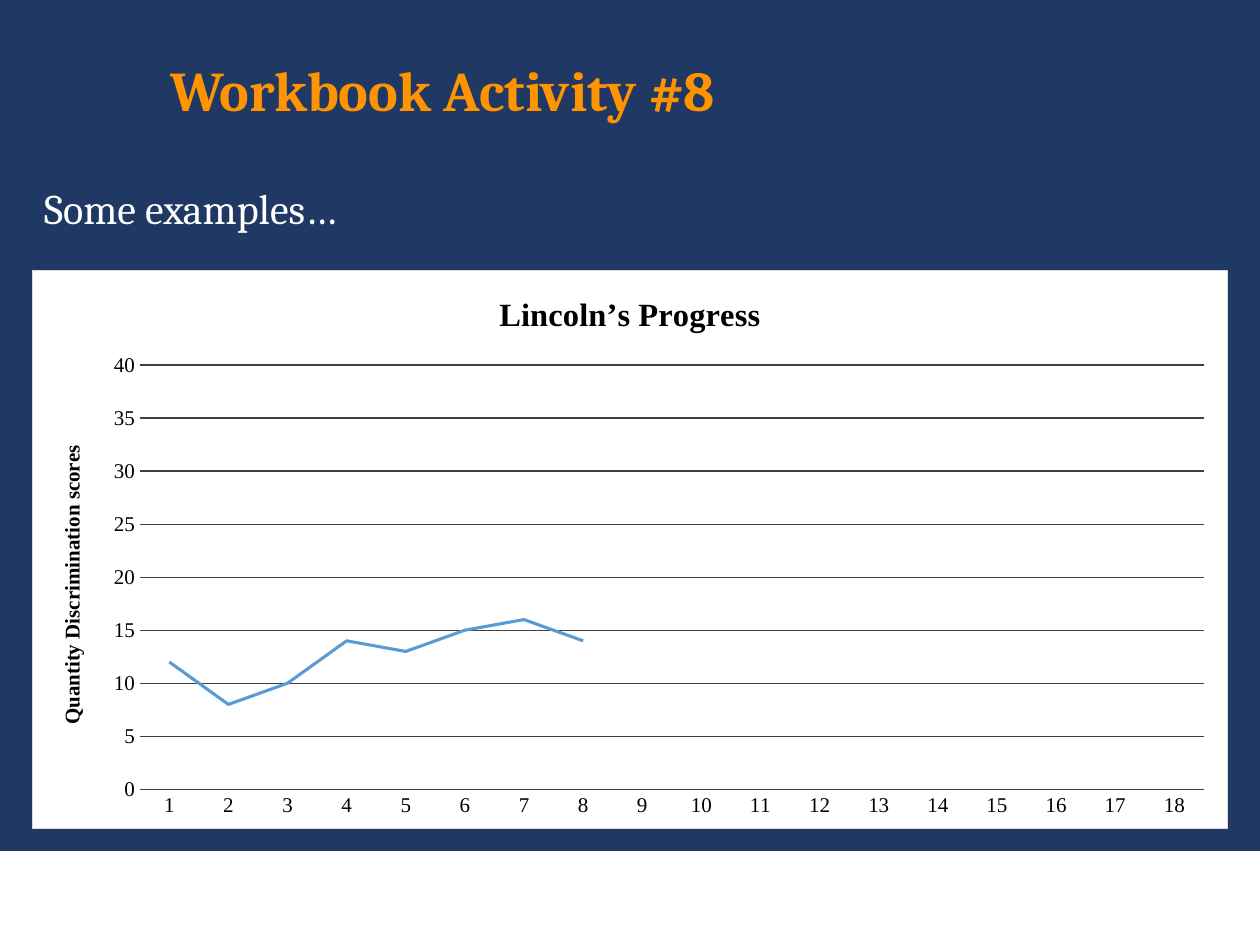
from lxml import etree
from pptx import Presentation
from pptx.chart.data import CategoryChartData
from pptx.dml.color import RGBColor
from pptx.enum import chart as kinds, shapes, text
from pptx.oxml import parse_xml
from pptx.oxml.ns import nsdecls, qn
from pptx.util import Inches, Pt

NAVY = RGBColor(0x20, 0x38, 0x64)
ORANGE = RGBColor(0xFF, 0x93, 0x00)
WHITE = RGBColor(0xFF, 0xFF, 0xFF)
BLACK = RGBColor(0, 0, 0)
GRID = RGBColor(0x40, 0x40, 0x40)
BORDER = RGBColor(0xD9, 0xD9, 0xD9)
BLUE = RGBColor(0x5B, 0x9B, 0xD5)

HEADING = "Workbook Activity #8"
INTRO = "Some examples…"
CHART_TITLE = "Lincoln’s Progress"
SCORE_TITLE = "Quantity Discrimination scores"
SCORES = [12, 8, 10, 14, 13, 15, 16, 14]
WEEKS = 18

WIDTH, HEIGHT, MARGIN = 10, 7.5, 0.25
CONTENT = WIDTH - 2 * MARGIN
BAND_TOP = 6.76
PLOT_SHARES = {"x": 0.09, "y": 0.17, "w": 0.89, "h": 0.76}


def style(font, size, color, name, bold=False):
    font.size, font.name, font.bold = Pt(size), name, bold
    font.color.rgb = color


def fill_placeholder(box, words, place, size, color, bold, anchor):
    box.left, box.top, box.width, box.height = map(Inches, place)
    frame = box.text_frame
    frame.text = words
    frame.word_wrap = True
    frame.auto_size = text.MSO_AUTO_SIZE.NONE
    frame.vertical_anchor = anchor
    para = frame.paragraphs[0]
    props = para._p.get_or_add_pPr()
    props.set("marL", "0")
    props.set("indent", "0")
    etree.SubElement(props, qn("a:buNone"))
    para.alignment = text.PP_ALIGN.LEFT
    para.line_spacing = 1.1
    para.space_before = Pt(0)
    style(para.runs[0].font, size, color, "Cambria", bold)


def add_chart_title(owner, words, size):
    frame = owner.text_frame
    frame.text = words
    style(frame.paragraphs[0].runs[0].font, size, BLACK, "Times New Roman", True)


def add_background(chart):
    area = parse_xml(
        f'<c:spPr {nsdecls("c", "a")}>'
        f'<a:solidFill><a:srgbClr val="{WHITE}"/></a:solidFill>'
        f'<a:ln w="{Pt(0.75)}"><a:solidFill><a:srgbClr val="{BORDER}"/></a:solidFill></a:ln>'
        '</c:spPr>')
    chart._chartSpace.find(qn("c:chart")).addnext(area)


def place_plot(chart):
    plot_area = chart._chartSpace.find(".//" + qn("c:plotArea"))
    old = plot_area.find(qn("c:layout"))
    if old is not None:
        plot_area.remove(old)
    modes = '<c:layoutTarget val="inner"/><c:xMode val="edge"/><c:yMode val="edge"/>'
    shares = "".join(f'<c:{key} val="{share}"/>' for key, share in PLOT_SHARES.items())
    plot_area.insert(0, parse_xml(
        f'<c:layout {nsdecls("c")}><c:manualLayout>{modes}{shares}</c:manualLayout></c:layout>'))


def add_progress_chart(page):
    data = CategoryChartData()
    data.categories = [str(week) for week in range(1, WEEKS + 1)]
    data.add_series("Series 1", SCORES + [None] * (WEEKS - len(SCORES)))
    place = map(Inches, (MARGIN, 2.14, CONTENT, 4.44))
    chart = page.shapes.add_chart(kinds.XL_CHART_TYPE.LINE, *place, data).chart
    style(chart.font, 10, BLACK, "Times New Roman")
    chart.has_legend = False
    chart.has_title = True
    add_chart_title(chart.chart_title, CHART_TITLE, 18.6)

    for axis in (chart.category_axis, chart.value_axis):
        axis.major_tick_mark = axis.minor_tick_mark = kinds.XL_TICK_MARK.NONE
        axis.format.line.fill.background()
        style(axis.tick_labels.font, 12, BLACK, "Times New Roman")
    scores = chart.value_axis
    scores.minimum_scale, scores.maximum_scale, scores.major_unit = 0, 40, 5
    scores.has_title = True
    add_chart_title(scores.axis_title, SCORE_TITLE, 12)
    scores.has_major_gridlines = True
    scores.major_gridlines.format.line.color.rgb = GRID
    scores.major_gridlines.format.line.width = Pt(0.75)

    chart.plots[0].vary_by_categories = False
    line = chart.plots[0].series[0]
    line.smooth = False
    line.marker.style = kinds.XL_MARKER_STYLE.NONE
    line.format.line.color.rgb = BLUE
    line.format.line.width = Pt(1.75)
    add_background(chart)
    place_plot(chart)


def main():
    deck = Presentation()
    deck.slide_width, deck.slide_height = Inches(WIDTH), Inches(HEIGHT)
    page = deck.slides.add_slide(deck.slide_layouts[1])
    page.background.fill.solid()
    page.background.fill.fore_color.rgb = NAVY

    band = page.shapes.add_shape(
        shapes.MSO_SHAPE.RECTANGLE, 0, Inches(BAND_TOP), Inches(WIDTH), Inches(HEIGHT - BAND_TOP))
    band.shadow.inherit = False
    band.fill.solid()
    band.fill.fore_color.rgb = WHITE
    band.line.color.rgb = WHITE
    band.line.width = Pt(1)

    fill_placeholder(page.placeholders[1], INTRO, (MARGIN, 1.36, CONTENT, 5.29),
                     24, WHITE, False, text.MSO_ANCHOR.TOP)
    fill_placeholder(page.shapes.title, HEADING, (1.25, 0.28, 8.5, 0.8),
                     32, ORANGE, True, text.MSO_ANCHOR.MIDDLE)
    add_progress_chart(page)
    deck.save("out.pptx")


if __name__ == "__main__":
    main()
